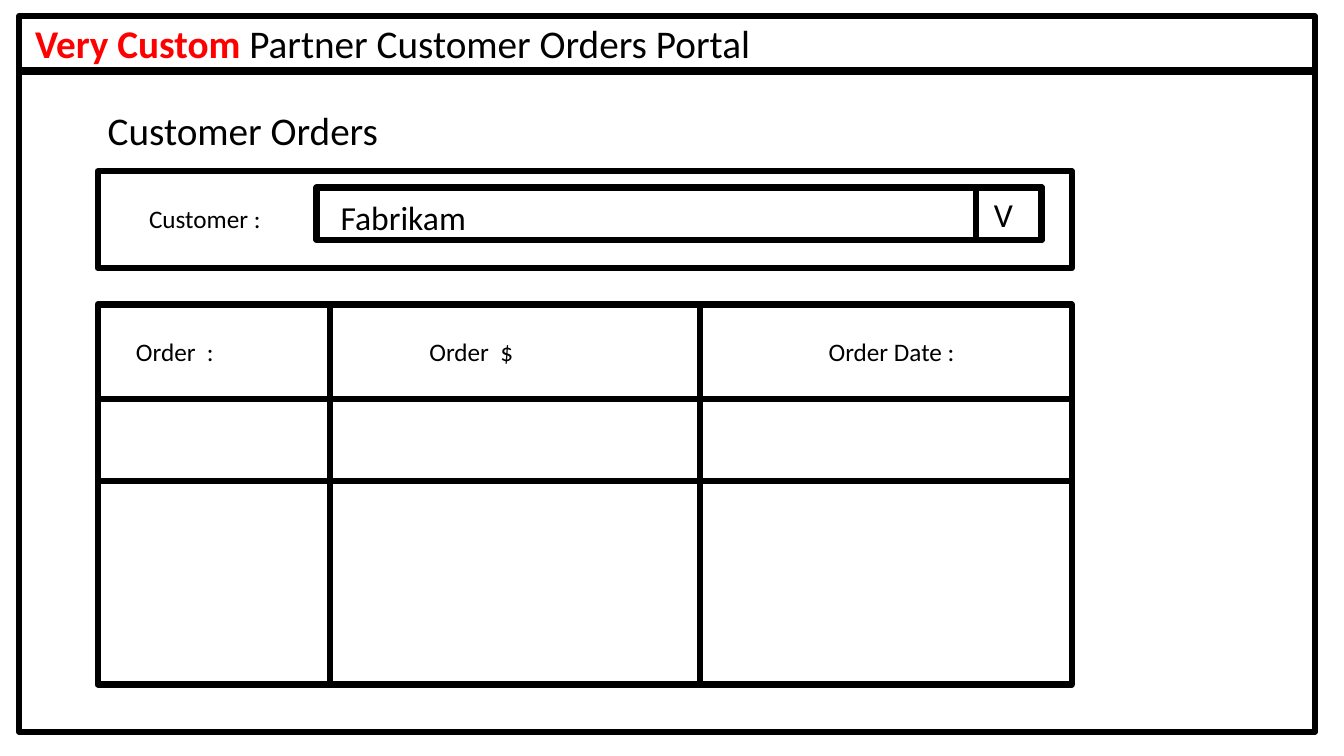
from pptx import Presentation
from pptx.dml.color import RGBColor
from pptx.enum.shapes import MSO_SHAPE as Shape
from pptx.enum.text import MSO_AUTO_SIZE as AutoSize
from pptx.util import Inches, Pt

FONT = "Calibri"
BLACK = "000000"
RED = "FF0000"

FRAME_LEFT, FRAME_WIDTH = 0.19, 12.85
PANEL_LEFT, PANEL_WIDTH = 0.97, 9.66
GRID_TOP, GRID_HEIGHT = 3.02, 3.77
DROPDOWN_TOP, DROPDOWN_HEIGHT = 1.86, 0.52
HEADER_TOP = 3.29


def color(hex_string):
    return RGBColor.from_string(hex_string)


def add_outline(slide, left, top, width, height):
    shape = slide.shapes.add_shape(
        Shape.RECTANGLE, Inches(left), Inches(top), Inches(width), Inches(height))
    shape.shadow.inherit = False
    shape.fill.background()
    shape.line.color.rgb = color(BLACK)
    shape.line.width = Pt(4.5)


def add_label(slide, left, top, width, height, size, *runs):
    """Add one line of text; each run is (text, hex colour, bold)."""
    box = slide.shapes.add_textbox(
        Inches(left), Inches(top), Inches(width), Inches(height))
    frame = box.text_frame
    frame.word_wrap = True
    frame.auto_size = AutoSize.SHAPE_TO_FIT_TEXT
    paragraph = frame.paragraphs[0]
    paragraph.font.name = FONT
    paragraph.font.size = Pt(size)
    for text, hex_string, bold in runs:
        run = paragraph.add_run()
        run.text = text
        run.font.color.rgb = color(hex_string)
        run.font.bold = bold


def add_title_bar(slide):
    add_outline(slide, FRAME_LEFT, 0.16, FRAME_WIDTH, 0.55)
    add_label(slide, 0.25, 0.14, 9.34, 0.57, 28,
              ("Very Custom ", RED, True),
              ("Partner Customer Orders Portal", BLACK, False))


def add_customer_picker(slide):
    add_label(slide, PANEL_LEFT, 1.01, 5.55, 0.57, 28,
              ("Customer Orders", BLACK, False))
    add_outline(slide, PANEL_LEFT, 1.7, PANEL_WIDTH, 0.96)
    add_label(slide, 1.38, 1.97, 1.76, 0.4, 18, ("Customer :", BLACK, False))
    for left, width in ((3.14, 7.19), (9.68, 0.65)):
        add_outline(slide, left, DROPDOWN_TOP, width, DROPDOWN_HEIGHT)
    add_label(slide, 3.28, 1.9, 1.76, 0.5, 24, ("Fabrikam", BLACK, False))
    add_label(slide, 9.76, 1.87, 0.49, 0.5, 24, ("V", BLACK, False))


def add_order_grid(slide):
    """Overlay a middle column and a middle row on the grid's outer box."""
    add_outline(slide, PANEL_LEFT, GRID_TOP, PANEL_WIDTH, GRID_HEIGHT)
    add_outline(slide, 3.27, GRID_TOP, 3.67, GRID_HEIGHT)
    add_outline(slide, PANEL_LEFT, 3.96, PANEL_WIDTH, 0.81)
    headers = (("Order  :", 1.25, 1.45),
               ("Order  $", 4.16, 1.45),
               ("Order Date :", 8.12, 1.95))
    for text, left, width in headers:
        add_label(slide, left, HEADER_TOP, width, 0.4, 18, (text, BLACK, False))


def main():
    presentation = Presentation()
    presentation.slide_width = Inches(13.33)
    presentation.slide_height = Inches(7.5)
    slide = presentation.slides.add_slide(presentation.slide_layouts[6])
    add_outline(slide, FRAME_LEFT, 0.7, FRAME_WIDTH, 6.56)
    add_title_bar(slide)
    add_customer_picker(slide)
    add_order_grid(slide)
    presentation.save("out.pptx")


if __name__ == "__main__":
    main()
